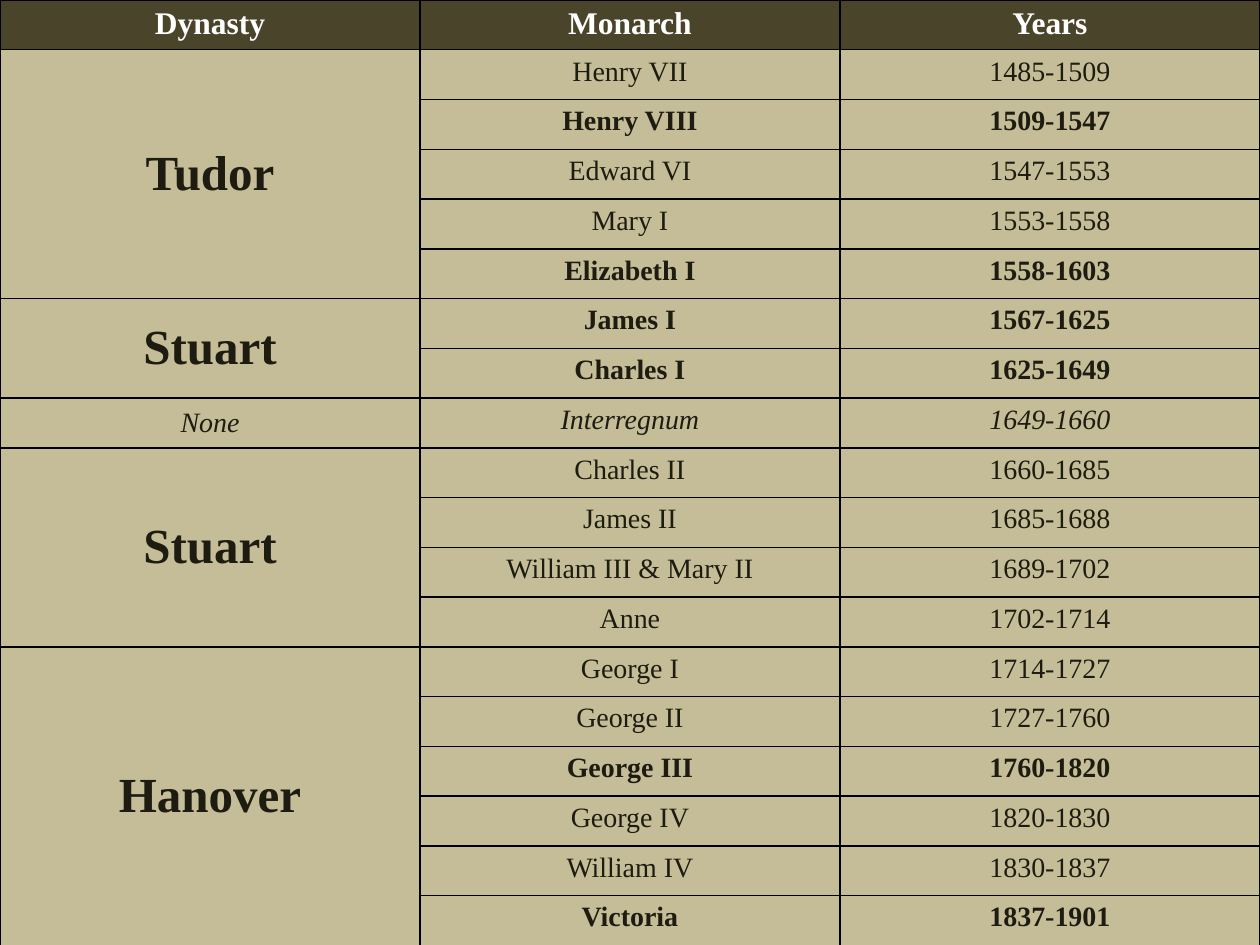
from lxml import etree
from pptx import Presentation
from pptx.dml.color import RGBColor
from pptx.enum.text import MSO_ANCHOR, PP_ALIGN
from pptx.oxml.ns import qn
from pptx.util import Cm, Pt

CENTER = PP_ALIGN.CENTER
TOP = MSO_ANCHOR.TOP
MIDDLE = MSO_ANCHOR.MIDDLE

BLACK = RGBColor(0x00, 0x00, 0x00)
WHITE = RGBColor(0xFF, 0xFF, 0xFF)
BROWN = RGBColor(0x4A, 0x45, 0x2A)
SAND = RGBColor(0xC4, 0xBD, 0x97)
INK = RGBColor(0x1E, 0x1C, 0x11)

FONT = "Times New Roman"
HEADS = ["Dynasty", "Monarch", "Years"]
REIGNS = [
    ("Tudor", [
        ("Henry VII", "1485-1509"),
        ("Henry VIII", "1509-1547"),
        ("Edward VI", "1547-1553"),
        ("Mary I", "1553-1558"),
        ("Elizabeth I", "1558-1603"),
    ]),
    ("Stuart", [
        ("James I", "1567-1625"),
        ("Charles I", "1625-1649"),
    ]),
    ("None", [
        ("Interregnum", "1649-1660"),
    ]),
    ("Stuart", [
        ("Charles II", "1660-1685"),
        ("James II", "1685-1688"),
        ("William III & Mary II", "1689-1702"),
        ("Anne", "1702-1714"),
    ]),
    ("Hanover", [
        ("George I", "1714-1727"),
        ("George II", "1727-1760"),
        ("George III", "1760-1820"),
        ("George IV", "1820-1830"),
        ("William IV", "1830-1837"),
        ("Victoria", "1837-1901"),
    ]),
]
MAJOR = {"Henry VIII", "Elizabeth I", "James I", "Charles I", "George III", "Victoria"}


def set_edges(cell):
    props = cell._tc.get_or_add_tcPr()
    for spot, side in enumerate(["lnL", "lnR", "lnT", "lnB"]):
        line = etree.Element(qn(f"a:{side}"), w=str(Pt(1)))
        fill = etree.SubElement(line, qn("a:solidFill"))
        etree.SubElement(fill, qn("a:srgbClr"), val=str(BLACK))
        props.insert(spot, line)


def set_text(cell, text, size, color=INK, bold=False, italic=False, anchor=TOP):
    cell.text_frame.text = text
    cell.vertical_anchor = anchor
    line = cell.text_frame.paragraphs[0]
    line.alignment = CENTER
    font = line.runs[0].font
    font.name = FONT
    font.size = Pt(size)
    font.bold = bold
    font.italic = italic
    font.color.rgb = color


def add_reigns(slide, left, top, width, height):
    count = 1 + sum(len(rulers) for _, rulers in REIGNS)
    table = slide.shapes.add_table(count, len(HEADS), left, top, width, height).table
    for row in range(count):
        table.rows[row].height = height // count
        for col in range(len(HEADS)):
            cell = table.cell(row, col)
            cell.fill.solid()
            cell.fill.fore_color.rgb = SAND if row else BROWN
            set_edges(cell)

    for col, head in enumerate(HEADS):
        set_text(table.cell(0, col), head, 18, WHITE, bold=True)

    row = 1
    for house, rulers in REIGNS:
        gap = house == "None"
        first = table.cell(row, 0)
        if len(rulers) > 1:
            first.merge(table.cell(row + len(rulers) - 1, 0))
        set_text(first, house, 16 if gap else 28, bold=not gap, italic=gap, anchor=MIDDLE)
        for ruler in rulers:
            for col, text in enumerate(ruler, 1):
                set_text(table.cell(row, col), text, 16, bold=ruler[0] in MAJOR, italic=gap)
            row += 1


def main():
    deck = Presentation()
    deck.slide_width = Cm(25.4)
    deck.slide_height = Cm(19.05)
    slide = deck.slides.add_slide(deck.slide_layouts[6])
    slide.background.fill.solid()
    slide.background.fill.fore_color.rgb = BLACK
    add_reigns(slide, 0, 0, deck.slide_width, Cm(19.07))
    deck.save("out.pptx")


if __name__ == "__main__":
    main()
